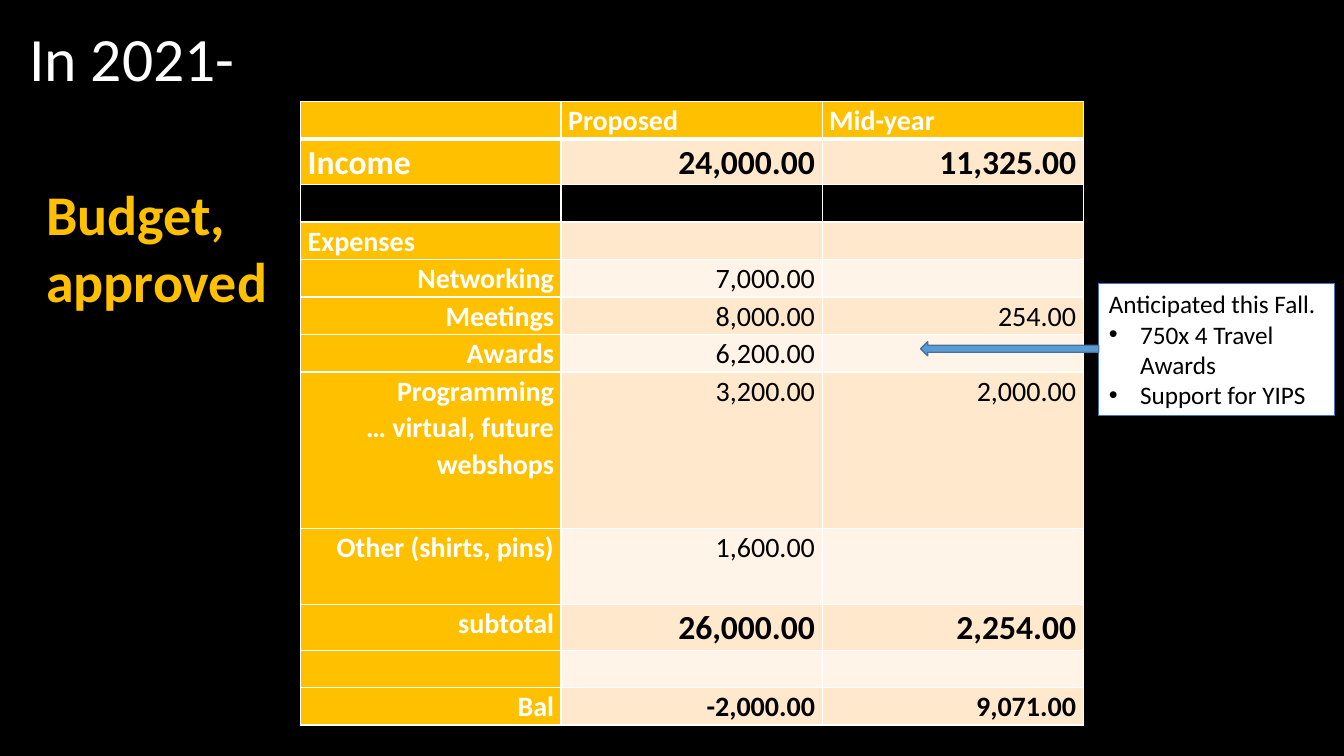
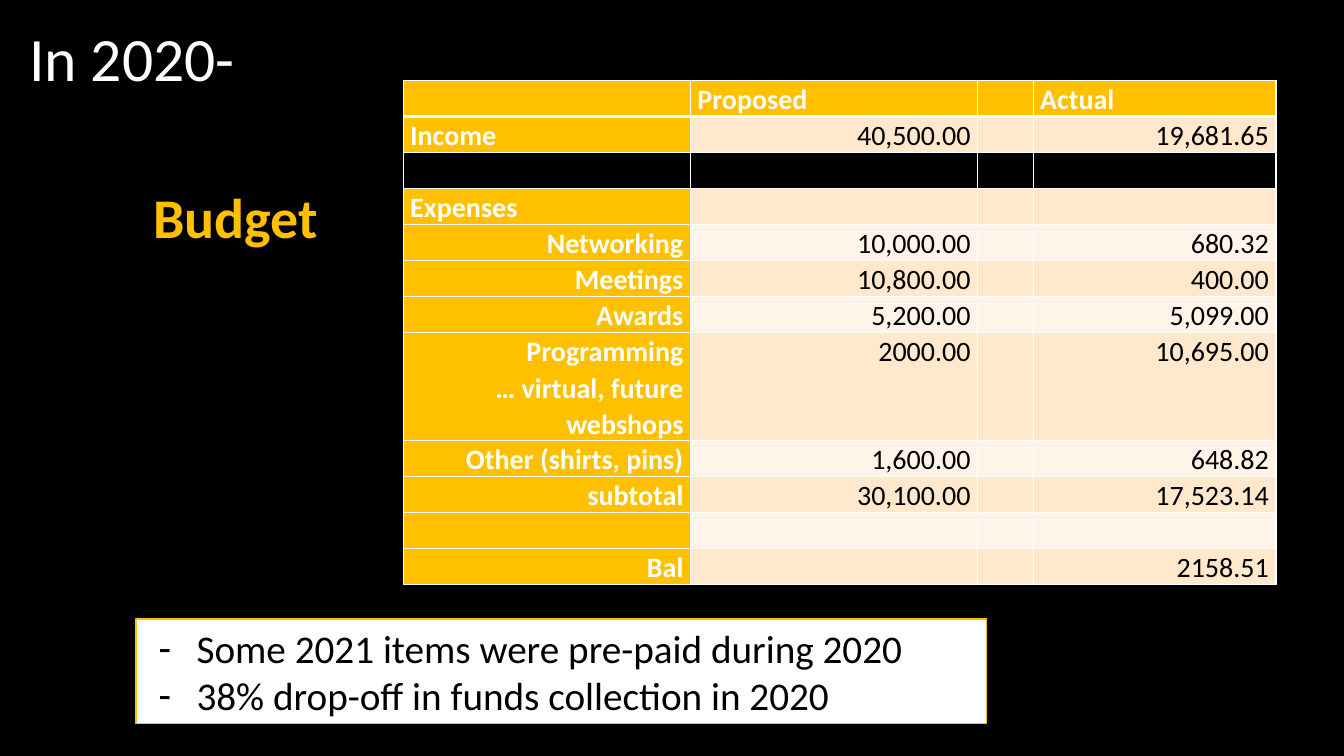
from lxml import etree
from pptx import Presentation
from pptx.dml.color import RGBColor
from pptx.enum.shapes import MSO_SHAPE
from pptx.enum.text import MSO_ANCHOR, MSO_AUTO_SIZE, PP_ALIGN
from pptx.oxml.ns import qn
from pptx.util import Inches, Pt

LEFT, CENTER, RIGHT = PP_ALIGN.LEFT, PP_ALIGN.CENTER, PP_ALIGN.RIGHT
MIDDLE = MSO_ANCHOR.MIDDLE
NO_FIT = MSO_AUTO_SIZE.NONE
LEFT_ARROW = MSO_SHAPE.LEFT_ARROW

COLORS = {
    "black": "000000",
    "white": "FFFFFF",
    "gold": "FFC000",
    "dark_band": "FFE8CC",
    "light_band": "FFF4E7",
    "arrow": "5B9BD5",
    "arrow_edge": "43739E",
    "note_edge": "4472C4",
}
FONT = "Calibri"
COLUMNS, ROWS = 80, 45
GAP_ROW = 2
LAST_LEFT_LABEL = 3
LABELS = [
    "", "Income", "", "Expenses", "Networking", "Meetings", "Awards",
    "Programming\n… virtual, future webshops", "Other (shirts, pins)",
    "subtotal", "", "Bal",
]


class BudgetDeck:
    def __init__(self):
        self.prs = Presentation()
        self.prs.slide_width, self.prs.slide_height = Inches(13.333), Inches(7.5)
        backdrop = self.prs.slide_master.background.fill
        backdrop.solid()
        backdrop.fore_color.rgb = self.rgb("black")
        self.slide = None

    @staticmethod
    def rgb(color):
        return RGBColor.from_string(COLORS[color])

    def across(self, columns):
        return round(self.prs.slide_width * columns / COLUMNS)

    def down(self, rows):
        return round(self.prs.slide_height * rows / ROWS)

    def box(self, x, y, width, height):
        return self.across(x), self.down(y), self.across(width), self.down(height)

    def place(self, shape, area):
        shape.left, shape.top, shape.width, shape.height = self.box(*area)

    def paint(self, shape, fill, edge):
        shape.fill.solid()
        shape.fill.fore_color.rgb = self.rgb(fill)
        shape.line.color.rgb = self.rgb(edge)
        shape.line.width = Pt(1)

    def set_text(self, frame, text, size, color, bold=False, align=LEFT, spacing=1.0):
        frame.text = text
        for paragraph in frame.paragraphs:
            paragraph.alignment = align
            paragraph.line_spacing = spacing
            paragraph.space_before = Pt(0)
            for run in paragraph.runs:
                run.font.name = FONT
                run.font.size = Pt(size)
                run.font.bold = bold
                run.font.color.rgb = self.rgb(color)

    def start(self, title):
        self.slide = self.prs.slides.add_slide(self.prs.slide_layouts[1])
        heading = self.slide.shapes.title
        self.place(heading, (1.14, -0.66, 69, 8.7))
        heading.text_frame.vertical_anchor = MIDDLE
        heading.text_frame.auto_size = NO_FIT
        self.set_text(heading.text_frame, title, 44, "white", spacing=0.9)

    def caption(self, text, area, align=LEFT):
        frame = self.slide.shapes.add_textbox(*self.box(*area)).text_frame
        frame.word_wrap = True
        self.set_text(frame, text, 40, "gold", bold=True, align=align)

    def note(self, lines, area, size, edge, bullet, indent, hanging, plain=0):
        note = self.slide.placeholders[1]
        self.place(note, area)
        self.paint(note, "white", edge)
        frame = note.text_frame
        frame.auto_size = NO_FIT
        frame.vertical_anchor = MIDDLE
        self.set_text(frame, "\n".join(lines), size, "black")
        for index, paragraph in enumerate(frame.paragraphs):
            props = paragraph._p.get_or_add_pPr()
            bulleted = index >= plain
            props.set("marL", str(Inches(indent) if bulleted else 0))
            props.set("indent", str(-Inches(hanging) if bulleted else 0))
            if bulleted:
                etree.SubElement(props, qn("a:buFont"), typeface="Arial")
                etree.SubElement(props, qn("a:buChar"), char=bullet)
            else:
                etree.SubElement(props, qn("a:buNone"))

    def arrow(self, area):
        arrow = self.slide.shapes.add_shape(LEFT_ARROW, *self.box(*area))
        arrow.shadow.inherit = False
        self.paint(arrow, "arrow", "arrow_edge")

    def borders(self, cell, row):
        thick = {0: "lnB", 1: "lnT"}.get(row)
        props = cell._tc.get_or_add_tcPr()
        for side in ("lnL", "lnR", "lnT", "lnB"):
            width = Pt(3 if side == thick else 1)
            line = etree.SubElement(props, qn(f"a:{side}"), w=str(width))
            solid = etree.SubElement(line, qn("a:solidFill"))
            etree.SubElement(solid, qn("a:srgbClr"), val=COLORS["white"])

    @staticmethod
    def cell_fill(row, column):
        if row == GAP_ROW:
            return "black"
        if row == 0 or column == 0:
            return "gold"
        return "dark_band" if row % 2 else "light_band"

    def budget(self, corner, widths, heights, figures, value_sizes=None, label_sizes=None):
        value_sizes, label_sizes = value_sizes or {}, label_sizes or {}
        area = (*corner, sum(widths), sum(heights))
        table = self.slide.shapes.add_table(
            len(heights), len(widths), *self.box(*area)).table
        for column, width in zip(table.columns, widths):
            column.width = self.across(width)
        for row, height in zip(table.rows, heights):
            row.height = self.down(height)
        for c, texts in enumerate([LABELS, *figures]):
            for r, text in enumerate(texts):
                cell = table.cell(r, c)
                cell.margin_left = cell.margin_right = Inches(0.07)
                cell.margin_top = cell.margin_bottom = 0
                self.borders(cell, r)
                cell.fill.solid()
                cell.fill.fore_color.rgb = self.rgb(self.cell_fill(r, c))
                is_label = r == 0 or c == 0
                sizes = label_sizes if is_label else value_sizes
                flush_left = r == 0 or (c == 0 and r <= LAST_LEFT_LABEL)
                self.set_text(cell.text_frame, text, sizes.get(r, 20),
                              "white" if is_label else "black",
                              bold=is_label or r in value_sizes,
                              align=LEFT if flush_left else RIGHT, spacing=1.07)


def main():
    deck = BudgetDeck()

    deck.start("In 2021-")
    deck.caption("Budget, approved", (2.16, 10.4, 19, 8.7))
    line = 2.23
    deck.budget(
        (17.9, 6.06), [15.5, 15.54, 15.54],
        [line, 2.7, *[line] * 5, 9.3, 4.56, 2.7, line, line],
        [
            ["Proposed", "24,000.00", "", "", "7,000.00", "8,000.00", "6,200.00",
             "3,200.00", "1,600.00", "26,000.00", "", "-2,000.00"],
            ["Mid-year", "11,325.00", "", "", "", "254.00", "",
             "2,000.00", "", "2,254.00", "", "9,071.00"],
        ],
        value_sizes={1: 24, 9: 24, 11: 20}, label_sizes={1: 24})
    deck.arrow((54.8, 20.34, 10.6, 0.84))
    deck.note(["Anticipated this Fall.", "750x 4 Travel Awards", "Support for YIPS"],
              (65.4, 16.86, 14.04, 7.86), 18, "note_edge", "•", 0.31, 0.31, plain=1)

    deck.start("In 2020-")
    deck.note(["Some 2021 items were pre-paid during 2020",
               "38% drop-off in funds collection in 2020"],
              (8.1, 36.84, 50.64, 6.24), 28, "gold", "-", 0.5, 0.38)
    deck.caption("Budget", (7.86, 10.56, 12.3, 4.6), align=CENTER)
    line = 2.14
    deck.budget(
        (24, 4.8), [17.1, 17.1, 3.3, 14.46],
        [*[line] * 7, 3 * line, *[line] * 4],
        [
            ["Proposed", "40,500.00", "", "", "10,000.00", "10,800.00", "5,200.00",
             "2000.00", "1,600.00", "30,100.00", "", ""],
            [""] * len(LABELS),
            ["Actual", "19,681.65", "", "", "680.32", "400.00", "5,099.00",
             "10,695.00", "648.82", "17,523.14", "", "2158.51"],
        ])

    deck.prs.save("out.pptx")


if __name__ == "__main__":
    main()
